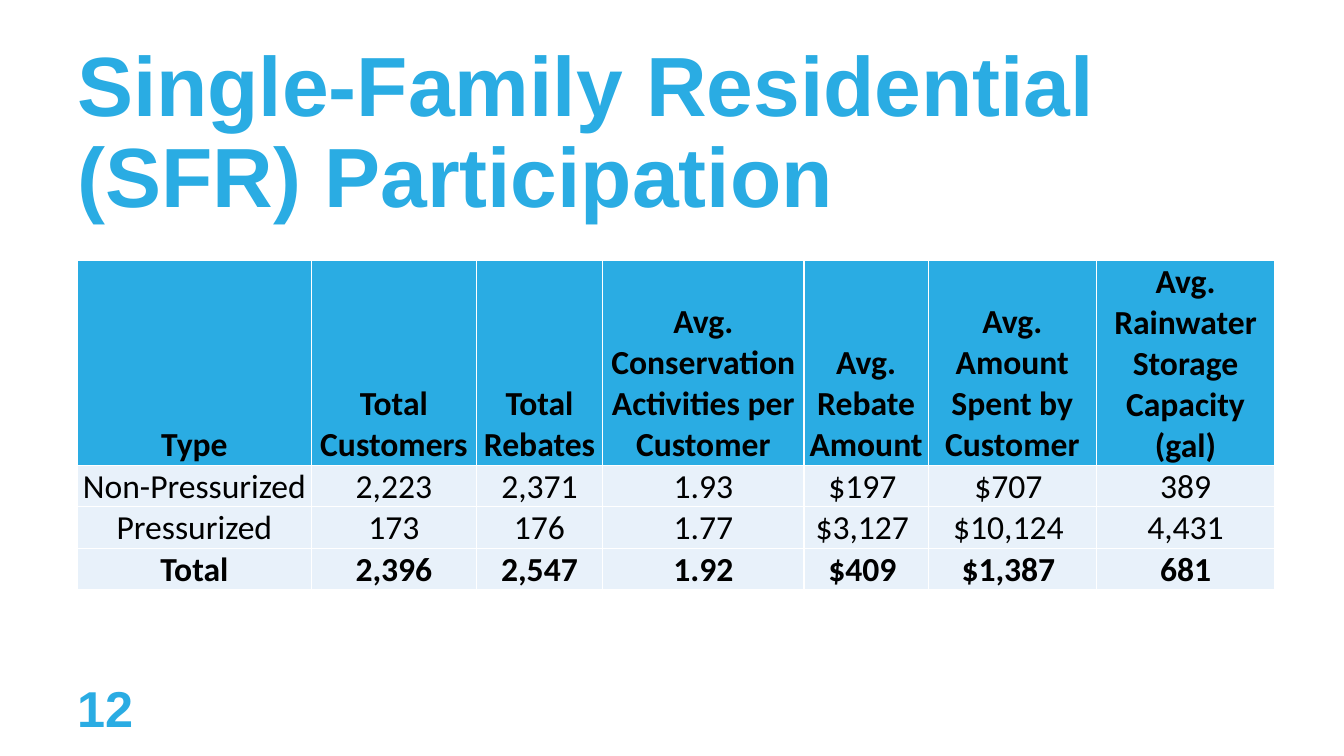
from lxml.etree import SubElement
from pptx import Presentation
from pptx.dml.color import RGBColor
from pptx.enum.text import MSO_ANCHOR, PP_ALIGN
from pptx.oxml.ns import qn
from pptx.util import Pt

BLUE, PALE, BLACK, WHITE = "2AACE3", "E8F1FA", "000000", "FFFFFF"
WIDTHS = [167, 118, 90, 144, 88.6, 120.2, 127.4]
HEIGHTS = [146.4, 29.6, 29.6, 29.6]
ROWS = [
    ["Type", "Total Customers", "Total Rebates",
     "Avg. Conservation Activities per Customer", "Avg. Rebate Amount",
     "Avg. Amount Spent by Customer", "Avg. Rainwater Storage Capacity (gal)"],
    ["Non-Pressurized", "2,223", "2,371", "1.93", "$197 ", "$707 ", "389"],
    ["Pressurized", "173", "176", "1.77", "$3,127 ", "$10,124 ", "4,431"],
    ["Total", "2,396", "2,547", "1.92", "$409 ", "$1,387 ", "681"],
]


def rgb(value):
    """Return the colour for a hex string."""
    return RGBColor.from_string(value)


def set_font(p, name, size, color, bold):
    """Set the font of a whole paragraph."""
    p.font.name, p.font.size, p.font.bold = name, Pt(size), bold
    p.font.color.rgb = rgb(color)


def add_title(s, text, x, y, w, h):
    """Place the title placeholder in its box."""
    sp = s.shapes.title
    sp.left, sp.top, sp.width, sp.height = Pt(x), Pt(y), Pt(w), Pt(h)
    tf = sp.text_frame
    tf.text = text
    tf.word_wrap = True
    tf.vertical_anchor = MSO_ANCHOR.MIDDLE
    p = tf.paragraphs[0]
    p.alignment, p.line_spacing = PP_ALIGN.LEFT, 0.9
    set_font(p, "Arial", 60, BLUE, True)


def add_page_number(s, text, x, y, w, h):
    """Place the page number in its box."""
    tf = s.shapes.add_textbox(Pt(x), Pt(y), Pt(w), Pt(h)).text_frame
    tf.text = text
    tf.word_wrap = True
    tf.vertical_anchor = MSO_ANCHOR.MIDDLE
    set_font(tf.paragraphs[0], "Arial", 36, BLUE, True)


def add_borders(cell, color, width):
    """Draw all four borders of a cell."""
    tc_pr = cell._tc.get_or_add_tcPr()
    for side in ("lnL", "lnR", "lnT", "lnB"):
        ln = SubElement(tc_pr, qn(f"a:{side}"), w=str(Pt(width)))
        SubElement(SubElement(ln, qn("a:solidFill")), qn("a:srgbClr"), val=color)


def fill_cell(cell, text, fill, bold):
    """Write and format one table cell."""
    add_borders(cell, WHITE, 1)
    cell.fill.solid()
    cell.fill.fore_color.rgb = rgb(fill)
    cell.margin_left = cell.margin_right = cell.margin_top = Pt(0.7)
    cell.margin_bottom = 0
    cell.vertical_anchor = MSO_ANCHOR.BOTTOM
    cell.text = text
    p = cell.text_frame.paragraphs[0]
    p.alignment = PP_ALIGN.CENTER
    set_font(p, "Calibri", 24, BLACK, bold)


def add_participation_table(s, x, y):
    """Place the participation table with its top left corner at x, y."""
    table = s.shapes.add_table(len(ROWS), len(WIDTHS), Pt(x), Pt(y),
                               Pt(sum(WIDTHS)), Pt(sum(HEIGHTS))).table
    for column, width in zip(table.columns, WIDTHS):
        column.width = Pt(width)
    for i, (row, height) in enumerate(zip(ROWS, HEIGHTS)):
        table.rows[i].height = Pt(height)
        for j, text in enumerate(row):
            fill_cell(table.cell(i, j), text, PALE if i else BLUE,
                      i in (0, len(ROWS) - 1))


def main():
    """Build and save the slide."""
    prs = Presentation()
    prs.slide_width, prs.slide_height = Pt(960), Pt(540)
    s = prs.slides.add_slide(prs.slide_layouts[5])
    add_page_number(s, "12", 48, 480, 78, 51)
    add_title(s, "Single-Family Residential (SFR) Participation", 48, 24, 864, 145)
    add_participation_table(s, 55.4, 186)
    prs.save("out.pptx")


if __name__ == "__main__":
    main()
